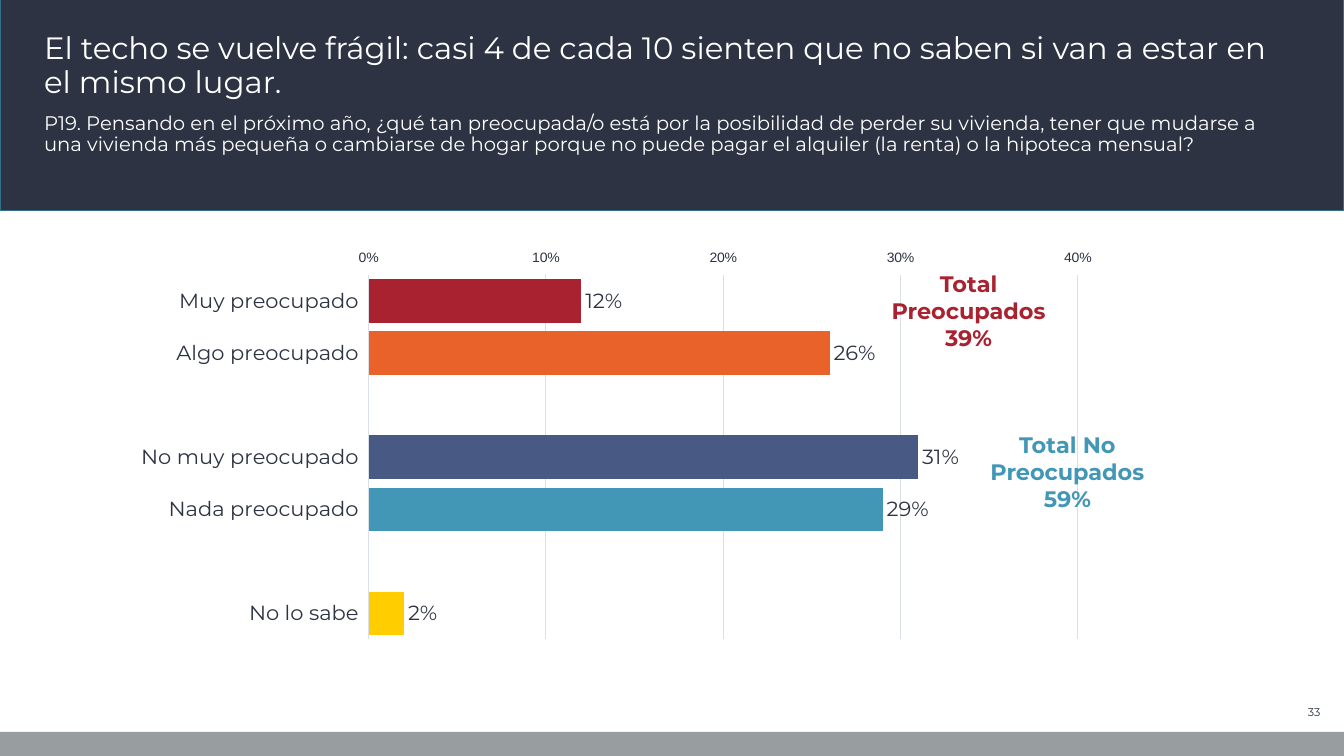
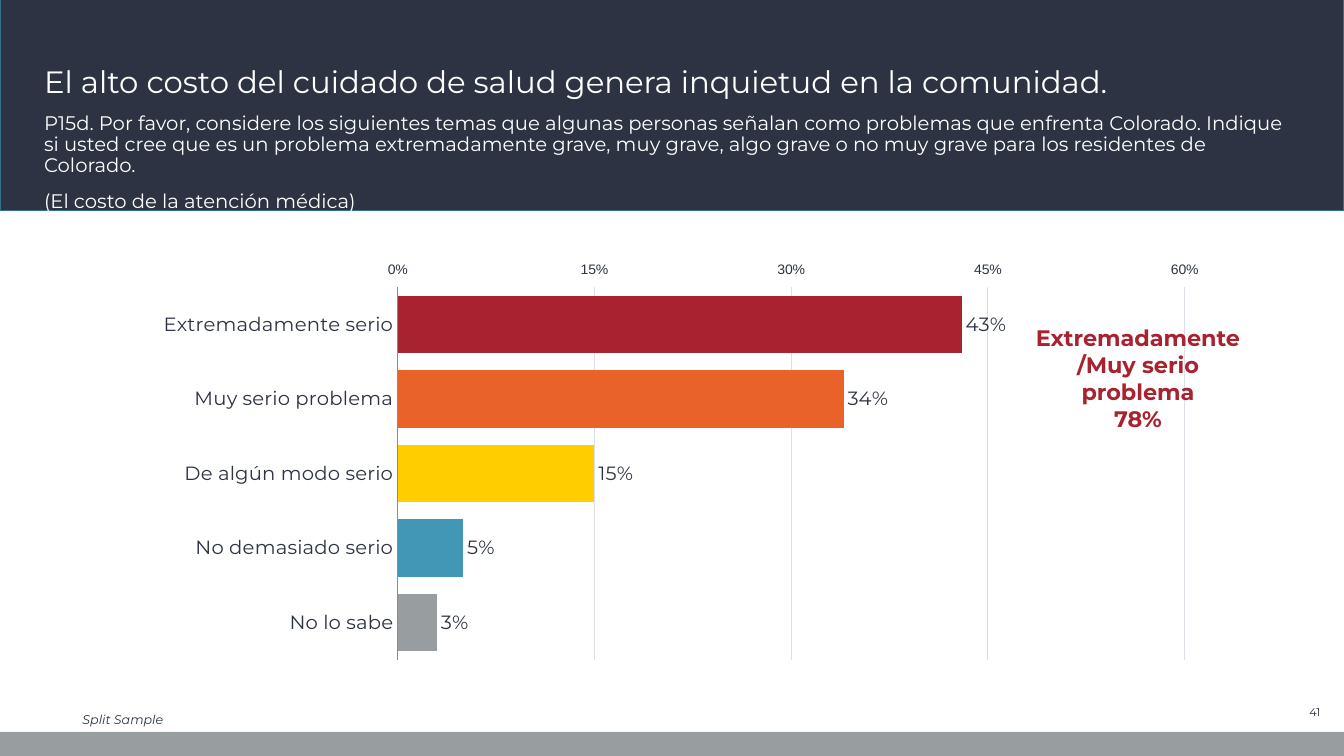
"""Build two survey slides, each with a headline band and a bar chart."""
from lxml.etree import SubElement
from pptx import Presentation
from pptx.chart.data import CategoryChartData as Data
from pptx.dml.color import RGBColor
from pptx.enum.chart import XL_AXIS_CROSSES as Cross
from pptx.enum.chart import XL_CHART_TYPE as Kind
from pptx.enum.chart import XL_LABEL_POSITION as Spot
from pptx.enum.chart import XL_TICK_MARK as Tick
from pptx.enum.shapes import MSO_SHAPE as Shape
from pptx.enum.text import MSO_ANCHOR as Anchor
from pptx.enum.text import PP_ALIGN as Align
from pptx.oxml.ns import qn
from pptx.util import Cm, Pt

NAVY = RGBColor(0x2D, 0x33, 0x42)
EDGE = RGBColor(0x32, 0x70, 0x87)
GRAY = RGBColor(0x98, 0x9D, 0xA0)
GRID = RGBColor(0xDB, 0xDF, 0xE7)
AXIS = RGBColor(0x8C, 0x8C, 0x8C)
WHITE = RGBColor(0xFF, 0xFF, 0xFF)
RED = RGBColor(0xA8, 0x22, 0x30)
ORANGE = RGBColor(0xE8, 0x62, 0x2A)
YELLOW = RGBColor(0xFF, 0xCD, 0x00)
INDIGO = RGBColor(0x48, 0x5A, 0x84)
TEAL = RGBColor(0x43, 0x97, 0xB6)
FACE = "Montserrat"

PAGES = [
    {
        "number": "33",
        "title": "El techo se vuelve frágil: casi 4 de cada 10 sienten que no saben "
                 "si van a estar en el mismo lugar.",
        "ask": ["P19. Pensando en el próximo año, ¿qué tan preocupada/o está por la "
                "posibilidad de perder su vivienda, tener que mudarse a una vivienda más "
                "pequeña o cambiarse de hogar porque no puede pagar el alquiler (la renta) "
                "o la hipoteca mensual?"],
        "note": None,
        "bars": [("Muy preocupado", 0.12, RED), ("Algo preocupado", 0.26, ORANGE),
                 ("", None, TEAL), ("No muy preocupado", 0.31, INDIGO),
                 ("Nada preocupado", 0.29, TEAL), ("", None, GRAY),
                 ("No lo sabe", 0.02, YELLOW)],
        "box": (2.51, 6.3, 25.68, 10.54),
        "plot": (0.264, 0.033, 0.696, 0.896),
        "step": 0.1, "gap": 20, "size": 15, "tick": Tick.OUTSIDE, "line": None,
        "tags": [((22.05, 6.68, 4.72, 2.31), "Total Preocupados\n39%", RED),
                 ((24.54, 10.74, 4.72, 2.31), "Total No Preocupados\n59%", TEAL)],
    },
    {
        "number": "41",
        "title": "El alto costo del cuidado de salud genera inquietud en la comunidad.",
        "ask": ["P15d. Por favor, considere los siguientes temas que algunas personas "
                "señalan como problemas que enfrenta Colorado. Indique si usted cree que "
                "es un problema extremadamente grave, muy grave, algo grave o no muy grave "
                "para los residentes de Colorado.",
                "(El costo de la atención médica)"],
        "note": "Split Sample",
        "bars": [("Extremadamente serio", 0.43, RED), ("Muy serio problema", 0.34, ORANGE),
                 ("De algún modo serio", 0.15, YELLOW), ("No demasiado serio", 0.05, TEAL),
                 ("No lo sabe", 0.03, GRAY)],
        "box": (1.27, 6.6, 30.28, 10.67),
        "plot": (0.289, 0.043, 0.655, 0.896),
        "step": 0.15, "gap": 30, "size": 14, "tick": Tick.NONE, "line": AXIS,
        "tags": [((25.81, 8.05, 5.74, 3), "Extremadamente/Muy serio problema\n78%", RED)],
    },
]


def style(font, size, color, name=FACE):
    font.size, font.name = Pt(size), name
    font.color.rgb = color


def write(slide, box, texts, size, color, anchor=Anchor.TOP, align=Align.LEFT,
          bold=False, italic=False, space=None):
    frame = slide.shapes.add_textbox(*map(Cm, box)).text_frame
    frame.word_wrap = True
    frame.vertical_anchor = anchor
    for i, text in enumerate(texts):
        para = frame.add_paragraph() if i else frame.paragraphs[0]
        para.text = text
        para.alignment = align
        para.line_spacing = space
        if i:
            para.space_before = Pt(10)
        style(para.font, size, color)
        para.font.bold, para.font.italic = bold, italic


deck = Presentation()
deck.slide_width, deck.slide_height = Cm(33.87), Cm(19.05)

for page in PAGES:
    slide = deck.slides.add_slide(deck.slide_layouts[6])

    for top, height, fill, edge in ((-0.08, 5.38, NAVY, EDGE), (18.44, 0.61, GRAY, None)):
        band = slide.shapes.add_shape(
            Shape.RECTANGLE, 0, Cm(top), deck.slide_width, Cm(height))
        band.shadow.inherit = False
        band.fill.solid()
        band.fill.fore_color.rgb = fill
        if edge:
            band.line.color.rgb = edge
            band.line.width = Pt(1)
        else:
            band.line.fill.background()

    write(slide, (31.55, 17.65, 1.98, 0.61), [page["number"]], 8, NAVY,
          Anchor.MIDDLE, Align.RIGHT)
    write(slide, (0.86, 0.18, 32.11, 2.46), [page["title"]], 22, WHITE,
          Anchor.BOTTOM, space=0.9)
    write(slide, (0.86, 2.74, 32.11, 2.34), page["ask"], 14, WHITE, space=0.9)
    if page["note"]:
        write(slide, (1.83, 17.65, 29.69, 0.79), [page["note"]], 9, NAVY,
              Anchor.BOTTOM, italic=True, space=0.9)

    names, values, fills = zip(*page["bars"])
    data = Data(number_format="0%")
    data.categories = names
    data.add_series("Series 1", values)
    chart = slide.shapes.add_chart(
        Kind.BAR_CLUSTERED, *map(Cm, page["box"]), data).chart
    chart.has_legend = chart.has_title = False
    style(chart.font, 10, NAVY)

    cats = chart.category_axis
    cats.reverse_order = True
    cats.crosses = Cross.MAXIMUM
    cats.major_tick_mark = page["tick"]
    style(cats.tick_labels.font, page["size"], NAVY)
    if page["line"]:
        cats.format.line.color.rgb = page["line"]
    else:
        cats.format.line.fill.background()

    scale = chart.value_axis
    scale.minimum_scale, scale.maximum_scale = 0, round(page["step"] * 4, 2)
    scale.major_unit = page["step"]
    scale.major_tick_mark = Tick.OUTSIDE
    scale.format.line.fill.background()
    scale.major_gridlines.format.line.color.rgb = GRID
    scale.major_gridlines.format.line.width = Pt(0.75)
    scale.tick_labels.number_format = "0%"
    scale.tick_labels.number_format_is_linked = False
    style(scale.tick_labels.font, 10, NAVY, "Arial")

    plot = chart.plots[0]
    plot.gap_width = page["gap"]
    plot.vary_by_categories = False
    series = plot.series[0]
    series.format.fill.solid()
    series.format.fill.fore_color.rgb = TEAL
    for i, fill in enumerate(fills):
        if fill != TEAL:
            point = series.points[i].format.fill
            point.solid()
            point.fore_color.rgb = fill
    labels = series.data_labels
    labels.show_value = True
    labels.position = Spot.OUTSIDE_END
    labels.number_format = "0%"
    labels.number_format_is_linked = False
    style(labels.font, page["size"], NAVY)

    area = plot._element.getparent()
    for old in area.findall(qn("c:layout")):
        area.remove(old)
    layout = SubElement(area, qn("c:layout"))
    area.insert(0, layout)
    manual = SubElement(layout, qn("c:manualLayout"))
    rules = [("layoutTarget", "inner"), ("xMode", "edge"), ("yMode", "edge")]
    for key, value in rules + list(zip("xywh", page["plot"])):
        SubElement(manual, qn(f"c:{key}")).set("val", str(value))

    for box, text, color in page["tags"]:
        write(slide, box, [text], 16, color, align=Align.CENTER, bold=True)

deck.save("out.pptx")
